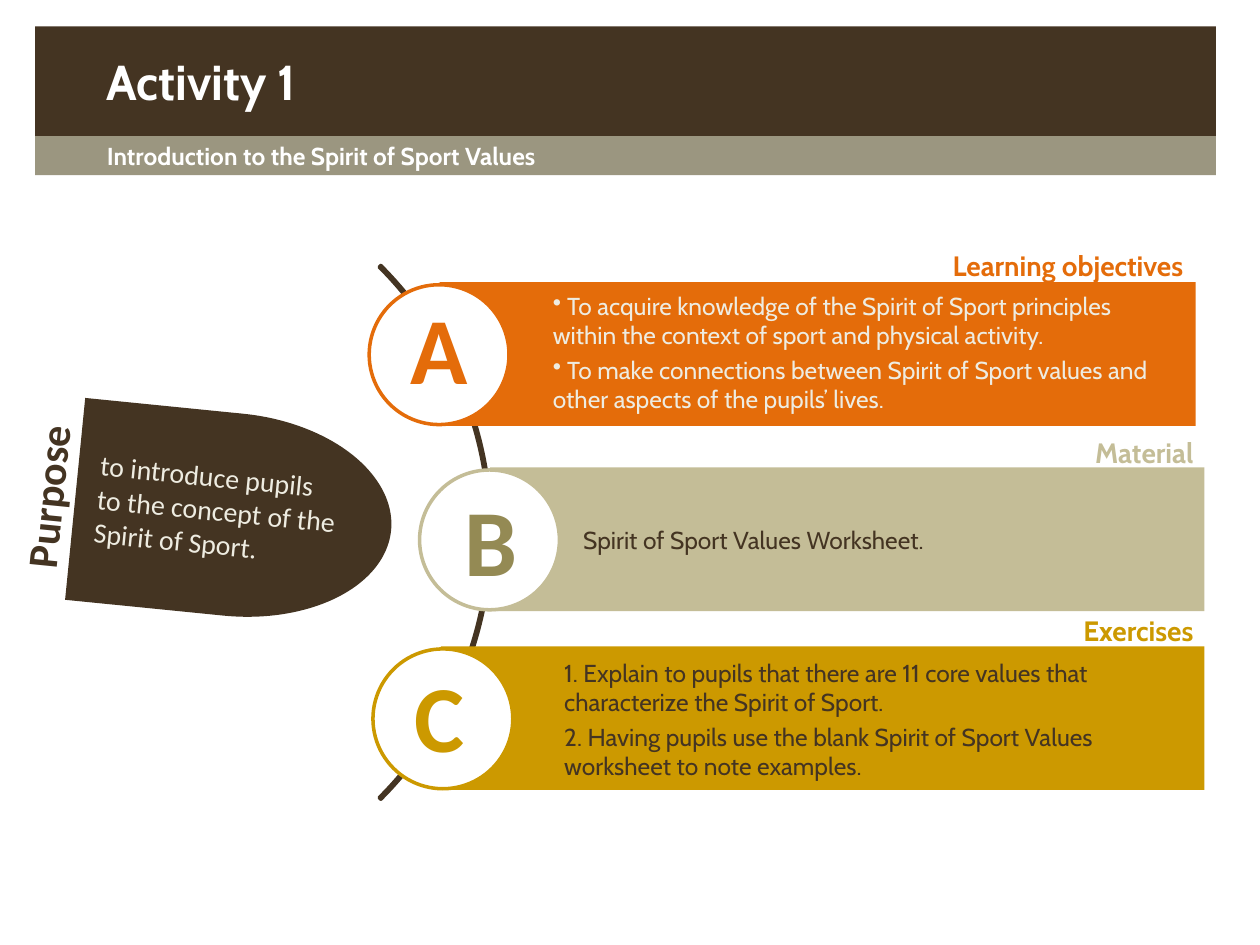
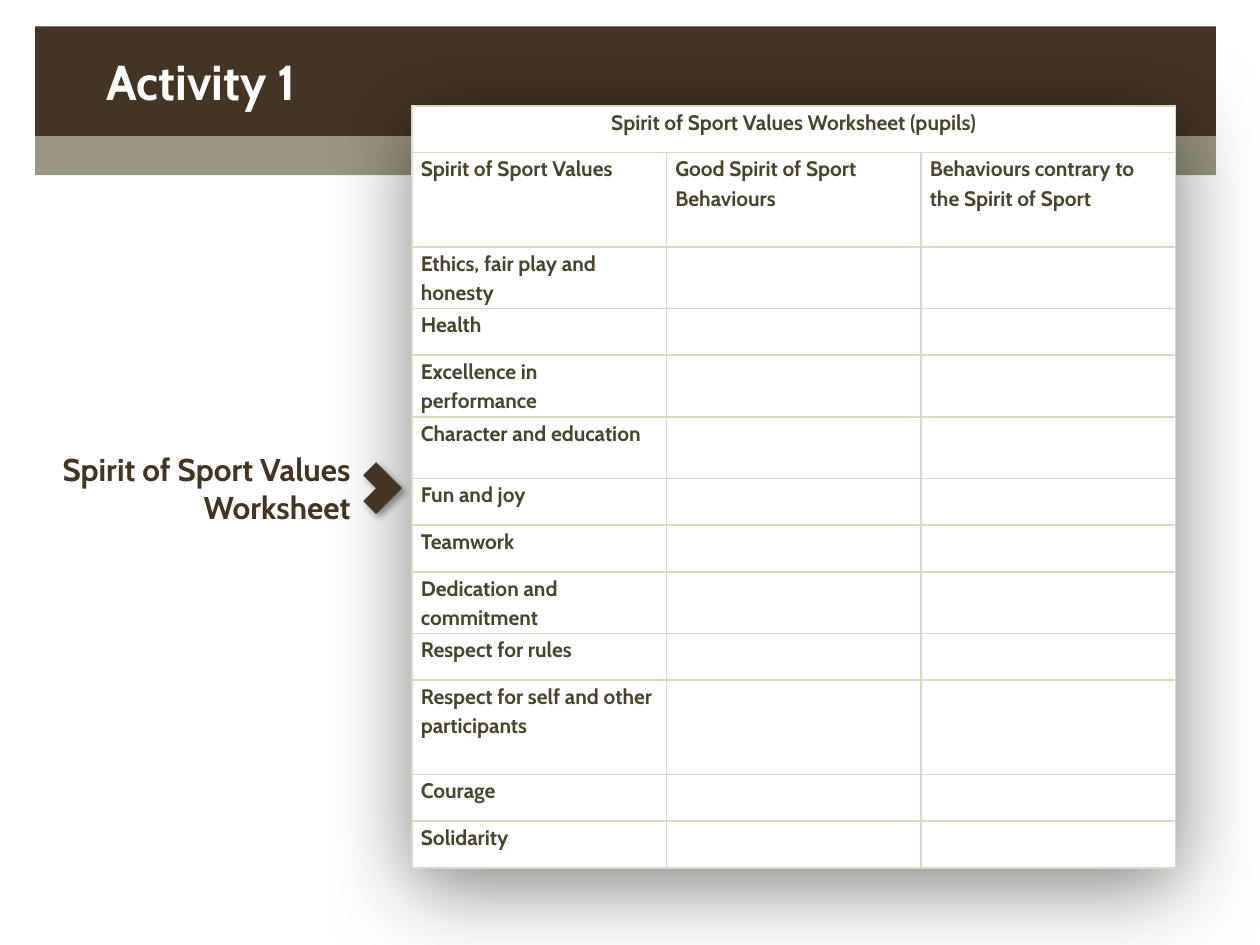
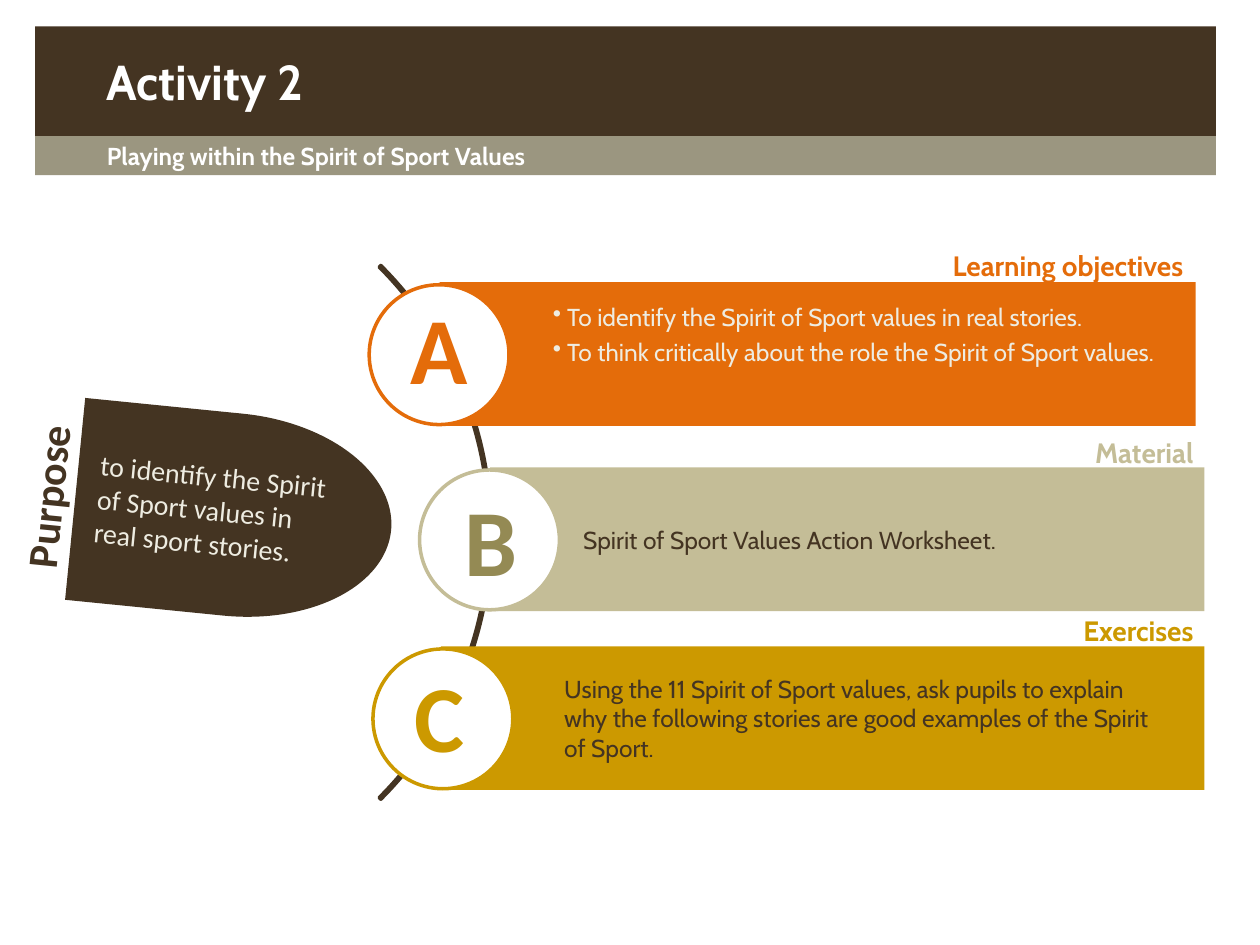
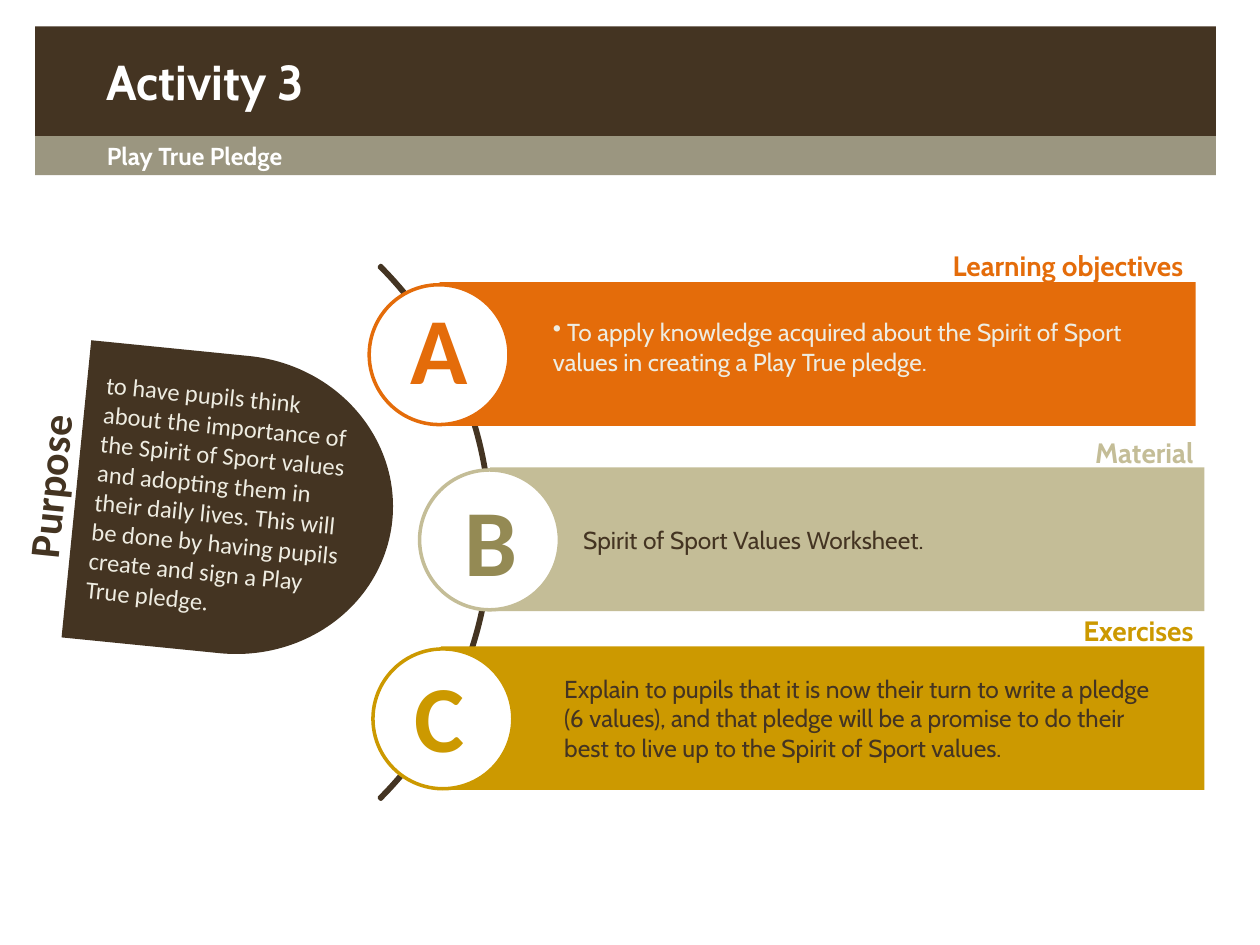
from lxml import etree
from pptx import Presentation
from pptx.dml.color import RGBColor
from pptx.enum.shapes import MSO_SHAPE
from pptx.enum.text import MSO_AUTO_SIZE, PP_ALIGN
from pptx.oxml import parse_xml
from pptx.oxml.ns import nsdecls, qn
from pptx.util import Inches, Pt

COLORS = {
    "brown": "443422", "taupe": "9B9680", "white": "FFFFFF", "cream": "EEECE1",
    "orange": "E46C0A", "sand": "C4BD97", "olive": "948A54", "gold": "CC9900",
    "table_text": "4A442A", "table_line": "DDD9C3",
}
SHADOW = (
    '<a:effectLst {}><a:outerShdw blurRad="{}" dist="{}" dir="{}" algn="ctr" rotWithShape="0">'
    '<a:srgbClr val="000000"><a:alpha val="{}"/></a:srgbClr></a:outerShdw></a:effectLst>'
)

ACTIVITIES = [
    {
        "title": "Activity 1",
        "subtitle": "Introduction to the Spirit of Sport Values",
        "purpose": "to introduce pupils to the concept of the Spirit of Sport.",
        "objectives": [
            " To acquire knowledge of the Spirit of Sport principles within the context of sport and physical activity.",
            " To make connections between Spirit of Sport values and other aspects of the pupils’ lives.",
        ],
        "objectives_box": (2.26, 1.09),
        "material": "Spirit of Sport Values Worksheet.",
        "material_width": 3.23,
        "exercises": [
            "1. Explain to pupils that there are 11 core values that characterize the Spirit of Sport.",
            "2. Having pupils use the blank Spirit of Sport Values worksheet to note examples.",
        ],
        "exercises_box": (5.17, 1.32),
    },
    {"title": "Activity 1"},
    {
        "title": "Activity 2",
        "subtitle": "Playing within the Spirit of Sport Values",
        "purpose": "to identify the Spirit of Sport values in real sport stories.",
        "objectives": [
            " To identify the Spirit of Sport values in real stories.",
            " To think critically about the role the Spirit of Sport values.",
        ],
        "objectives_box": (2.35, 0.85),
        "material": "Spirit of Sport Values Action Worksheet.",
        "material_width": 3.7,
        "exercises": [
            "Using the 11 Spirit of Sport values, ask pupils to explain why the following stories "
            "are good examples of the Spirit of Sport.",
        ],
        "exercises_box": (5.3, 0.81),
    },
    {
        "title": "Activity 3",
        "subtitle": "Play True Pledge",
        "purpose": "to have pupils think about the importance of the Spirit of Sport values and adopting "
                   "them in their daily lives. This will be done by having pupils create and sign a "
                   "Play True pledge.",
        "large_purpose": True,
        "objectives": [
            " To apply knowledge acquired about the Spirit of Sport values in creating a Play True pledge.",
        ],
        "objectives_box": (2.47, 0.57),
        "material": "Spirit of Sport Values Worksheet.",
        "material_width": 3.23,
        "exercises": [
            "Explain to pupils that it is now their turn to write a pledge (6 values), and that pledge "
            "will be a promise to do their best to live up to the Spirit of Sport values.",
        ],
        "exercises_box": (5.3, 0.81),
    },
]

WORKSHEET_HEADERS = ["Spirit of Sport Values", "Good Spirit of Sport Behaviours",
                     "Behaviours contrary to the Spirit of Sport"]
WORKSHEET_VALUES = [
    ("Ethics, fair play and honesty", 0.49), ("Health", 0.37), ("Excellence in performance", 0.49),
    ("Character and education", 0.49), ("Fun and joy", 0.37), ("Teamwork", 0.37),
    ("Dedication and commitment", 0.49), ("Respect for rules", 0.37),
    ("Respect for self and other participants", 0.75), ("Courage", 0.37), ("Solidarity", 0.37),
]


def add_shape(shapes, kind, box, fill=None, line=None, rotation=0):
    shape = shapes.add_shape(kind, *map(Inches, box))
    shape.shadow.inherit = False
    shape.rotation = rotation
    if fill:
        shape.fill.solid()
        shape.fill.fore_color.rgb = RGBColor.from_string(COLORS[fill])
    else:
        shape.fill.background()
    if line:
        shape.line.color.rgb = RGBColor.from_string(COLORS[line])
        shape.line.width = Pt(2)
    else:
        shape.line.fill.background()
    return shape


def add_text(shapes, box, lines, size, color, font="Cabin", bold=False,
             align=PP_ALIGN.LEFT, rotation=0, wrap=True, bullets=False):
    text_box = shapes.add_textbox(*map(Inches, box))
    text_box.rotation = rotation
    frame = text_box.text_frame
    frame.word_wrap = wrap
    frame.auto_size = MSO_AUTO_SIZE.SHAPE_TO_FIT_TEXT
    frame.text = "\n".join(lines)
    for paragraph in frame.paragraphs:
        paragraph.alignment = align
        paragraph.font.size = Pt(size)
        paragraph.font.name = font
        paragraph.font.bold = bold
        paragraph.font.color.rgb = RGBColor.from_string(COLORS[color])
        if bullets:
            bullet = parse_xml(f'<a:buChar {nsdecls("a")} char="•"/>')
            paragraph._p.get_or_add_pPr().find(qn("a:defRPr")).addprevious(bullet)
    for paragraph in frame.paragraphs[:-1]:
        paragraph.space_after = Pt(3)


presentation = Presentation()
presentation.slide_width = Inches(10)
presentation.slide_height = Inches(7.5)

for activity in ACTIVITIES:
    slide = presentation.slides.add_slide(presentation.slide_layouts[6])
    shapes = slide.shapes

    # Title bands
    add_shape(shapes, MSO_SHAPE.RECTANGLE, (0.28, 0.21, 9.37, 0.87), "brown")
    add_text(shapes, (0.75, 0.36, 8.82, 0.57), [activity["title"]], 28, "white", bold=True)
    add_shape(shapes, MSO_SHAPE.RECTANGLE, (0.28, 1.08, 9.37, 0.31), "taupe")

    if "subtitle" not in activity:
        # Worksheet table
        add_text(shapes, (0.12, 3.52, 2.76, 0.71), ["Spirit of Sport Values Worksheet"], 18, "brown",
                 bold=True, align=PP_ALIGN.RIGHT)
        rows = [(["Spirit of Sport Values Worksheet (pupils)", "", ""], 0.37), (WORKSHEET_HEADERS, 0.75)]
        rows += [([value, "", ""], height) for value, height in WORKSHEET_VALUES]
        table = shapes.add_table(len(rows), 3, Inches(3.27), Inches(0.84), Inches(6.06), Inches(6.06)).table
        table.cell(0, 0).merge(table.cell(0, 2))
        for row_index, (texts, height) in enumerate(rows):
            table.rows[row_index].height = Inches(height)
            for column_index, text in enumerate(texts):
                cell = table.cell(row_index, column_index)
                cell.margin_left = cell.margin_right = Inches(0.07)
                cell.margin_top = cell.margin_bottom = 0
                cell_properties = cell._tc.get_or_add_tcPr()
                for side in ("lnL", "lnR", "lnT", "lnB"):
                    border = etree.SubElement(cell_properties, qn(f"a:{side}"), w=str(Pt(1)))
                    border_fill = etree.SubElement(border, qn("a:solidFill"))
                    etree.SubElement(border_fill, qn("a:srgbClr"), val=COLORS["table_line"])
                cell.fill.solid()
                cell.fill.fore_color.rgb = RGBColor.from_string(COLORS["white"])
                if not text:
                    continue
                cell.text = text
                paragraph = cell.text_frame.paragraphs[0]
                paragraph.alignment = PP_ALIGN.CENTER if row_index == 0 else PP_ALIGN.LEFT
                paragraph.line_spacing = 1.15
                paragraph.space_before = Pt(3)
                paragraph.space_after = Pt(3 if row_index < 2 else 6)
                paragraph.font.size = Pt(12)
                paragraph.font.name = "Cabin"
                paragraph.font.bold = True
                paragraph.font.color.rgb = RGBColor.from_string(COLORS["table_text"])
        table_shadow = parse_xml(SHADOW.format(nsdecls("a"), Pt(50), Pt(10), 90 * 60000, 50000))
        table._tbl.tblPr.insert(0, table_shadow)

        pointer = add_shape(shapes, MSO_SHAPE.CORNER, (2.84, 3.73, 0.29, 0.29), "brown", rotation=225)
        pointer_shadow = parse_xml(SHADOW.format(nsdecls("a"), Pt(4), Pt(3), 45 * 60000, 40000))
        properties = pointer.element.spPr
        properties.replace(properties.find(qn("a:effectLst")), pointer_shadow)
        continue

    add_text(shapes, (0.75, 1.07, 8.35, 0.34), [activity["subtitle"]], 14, "white", bold=True)
    arc = add_shape(shapes, MSO_SHAPE.BLOCK_ARC, (-2.09, 1.23, 5.99, 5.99), line="brown")
    for index, value in enumerate((189, 27, 0.003)):
        arc.adjustments[index] = value
    arc.element.spPr.find(qn("a:ln")).set("cap", "rnd")

    # Purpose
    if activity.get("large_purpose"):
        panel_box, text_area, label_box = (0.6, 2.82, 2.52, 2.37), (0.66, 2.98, 2.2, 1.99), (-0.77, 3.61, 2.32, 0.5)
        purpose_size = 14
    else:
        panel_box, text_area, label_box = (0.59, 3.28, 2.52, 1.61), (0.67, 3.6, 2.1, 0.91), (-0.41, 3.69, 1.57, 0.5)
        purpose_size = 16
    purpose = shapes.add_group_shape().shapes
    add_shape(purpose, MSO_SHAPE.FLOWCHART_DELAY, panel_box, "brown", rotation=5.7)
    add_text(purpose, text_area, [activity["purpose"]], purpose_size, "cream", "Calibri", rotation=5.7)
    add_text(purpose, label_box, ["Purpose"], 24, "brown", "Calibri", True, PP_ALIGN.CENTER, 275.7)

    # Lettered sections: bar, circle, letter, text and heading
    objectives_top, objectives_height = activity["objectives_box"]
    exercises_top, exercises_height = activity["exercises_box"]
    sections = [
        ("A", "Learning objectives", "orange", "orange", (3.49, 2.24, 6, 1.14), 2.93, (3.16, 2.25, 0.66, 1.01),
         (4.29, objectives_top, 5.04, objectives_height), activity["objectives"], "cream", (3.9, 1.92, 5.59, 0.37)),
        ("B", "Material", "sand", "olive", (3.89, 3.71, 5.67, 1.14), 3.33, (3.59, 3.78, 0.63, 1.01),
         (4.53, 4.12, activity["material_width"], 0.34), [activity["material"]], "brown", (3.9, 3.41, 5.67, 0.37)),
        ("C", "Exercises", "gold", "gold", (3.5, 5.13, 6.06, 1.14), 2.96, (3.19, 5.17, 0.6, 1.01),
         (4.38, exercises_top, 4.96, exercises_height), activity["exercises"], "brown", (3.9, 4.82, 5.67, 0.37)),
    ]
    for (letter, heading, color, letter_color, bar_box, circle_left, letter_box,
         body_box, body, body_color, heading_box) in sections:
        section = shapes.add_group_shape().shapes
        add_shape(section, MSO_SHAPE.RECTANGLE, bar_box, color)
        add_shape(section, MSO_SHAPE.OVAL, (circle_left, bar_box[1] + 0.02, 1.11, 1.11), "white", color)
        add_text(section, letter_box, [letter], 54, letter_color, "Calibri", True, wrap=False)
        add_text(section, body_box, body, 14, body_color, bullets=letter == "A")
        add_text(section, heading_box, [heading], 16, color, bold=True, align=PP_ALIGN.RIGHT)

presentation.save("out.pptx")
